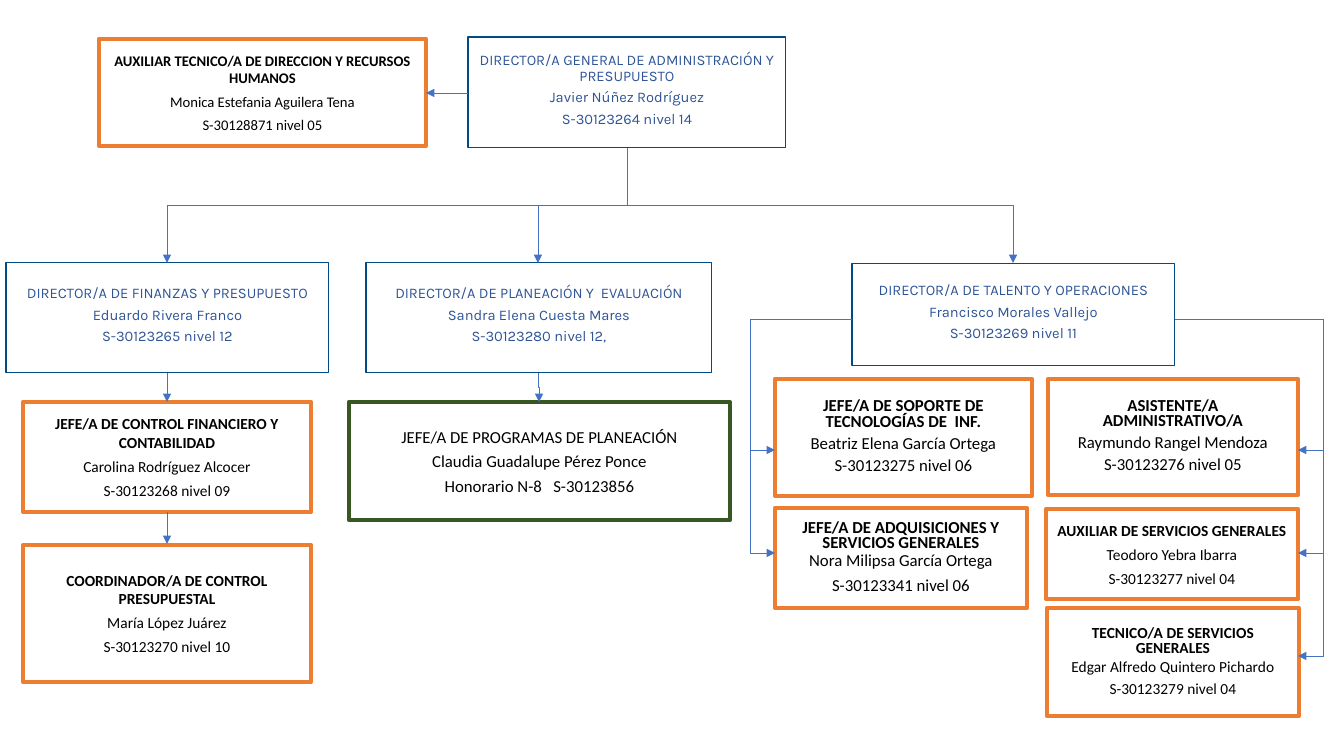
from pptx import Presentation
from pptx import util as u
from pptx.dml.color import RGBColor
from pptx.enum import shapes, text
from pptx.oxml.ns import qn
from lxml import etree

WHITE = RGBColor(0xFF, 0xFF, 0xFF)
BLACK = RGBColor(0, 0, 0)
NAVY = RGBColor(0x00, 0x4A, 0x86)
INK = RGBColor(0x2F, 0x55, 0x97)
ORANGE = RGBColor(0xED, 0x7D, 0x31)
GREEN = RGBColor(0x38, 0x57, 0x23)
BLUE = RGBColor(0x44, 0x72, 0xC4)

WIDE = ((1.0, 4), (1.0, 4), (1.0, 4))
LOOSE = ((1.0, 4.2), (u.Pt(16.6), 0.8), (u.Pt(16.6), 0.8))
TIGHT = ((u.Pt(10.8), 2.3), (u.Pt(15), 0.8), (u.Pt(15), 0.8))
MIXED = ((u.Pt(10.8), 2.3), (u.Pt(10.8), 2.3), (u.Pt(15), 0.8))
CLOSE = ((u.Pt(10.8), 2.3), (u.Pt(10.8), 2.3), (1.0, 3))


def px(n):
    return u.Emu(round(n * 914400 / 100.8))


class Chart:
    def __init__(self):
        self.deck = Presentation()
        self.deck.slide_width = px(1344)
        self.deck.slide_height = px(756)
        self.slide = self.deck.slides.add_slide(self.deck.slide_layouts[6])

    def box(self, at, line, width, pad, foot):
        box = self.slide.shapes.add_shape(
            shapes.MSO_SHAPE.RECTANGLE, *[px(n) for n in at])
        box.shadow.inherit = False
        box.fill.background()
        box.line.color.rgb = line
        box.line.width = u.Pt(width)
        frame = box.text_frame
        frame.word_wrap = True
        frame.vertical_anchor = text.MSO_ANCHOR.MIDDLE
        frame.margin_left = frame.margin_right = px(pad)
        frame.margin_top = px(min(pad, 5))
        frame.margin_bottom = px(foot)
        return box

    def label(self, box, lines, font, size, color):
        frame = box.text_frame
        frame.text = "\n".join(lines)
        for para in frame.paragraphs:
            para.alignment = text.PP_ALIGN.CENTER
            para.font.name = font
            para.font.size = u.Pt(size)
            para.font.color.rgb = color
        return frame.paragraphs

    def head(self, at, *lines):
        box = self.box(at, NAVY, 0.75, 1, 6)
        box.fill.solid()
        box.fill.fore_color.rgb = WHITE
        for para in self.label(box, lines, "Karla", 10.5, INK):
            para.line_spacing = 0.9
            para.space_after = u.Pt(4)

    def post(self, at, lines, size=11, lead=WIDE, pad=10, line=ORANGE, bold=True):
        box = self.box(at, line, 3, pad, 5)
        paras = self.label(box, lines, "Calibri", size, BLACK)
        paras[0].font.bold = bold
        for para, (space, gap) in zip(paras, lead):
            para.line_spacing = space
            para.space_before = u.Pt(gap)

    def link(self, kind, *ends):
        link = self.slide.shapes.add_connector(kind, *[px(n) for n in ends])
        link.line.color.rgb = BLUE
        link.line.width = u.Pt(0.5)
        props = link.element.spPr
        etree.SubElement(props.find(qn("a:ln")), qn("a:tailEnd"), type="triangle")
        etree.SubElement(props, qn("a:effectLst"))
        return props

    def arrow(self, *ends):
        self.link(shapes.MSO_CONNECTOR.STRAIGHT, *ends)

    def side(self, x, y, to, down, via):
        props = self.link(shapes.MSO_CONNECTOR.ELBOW, x, y, to, down)
        bend = round((via - x) / (to - x) * 100000)
        guides = props.find(qn("a:prstGeom")).find(qn("a:avLst"))
        etree.SubElement(guides, qn("a:gd"), name="adj1", fmla=f"val {bend}")

    def drop(self, x, y, to, down):
        mid, half = (x + to) / 2, (down - y) / 2
        level, reach = (y + down) / 2, abs(to - x) / 2
        turn = -1 if to > x else 1
        props = self.link(shapes.MSO_CONNECTOR.ELBOW,
                          mid - turn * half, level - reach,
                          mid + turn * half, level + reach)
        angle = 270 if to > x else 90
        props.find(qn("a:xfrm")).set("rot", str(angle * 60000))


def main():
    chart = Chart()
    chart.head((468, 37, 318, 111), "DIRECTOR/A GENERAL DE ADMINISTRACIÓN Y PRESUPUESTO",
               "Javier Núñez Rodríguez", "S-30123264 nivel 14")
    chart.head((6, 263, 323, 110), "DIRECTOR/A DE FINANZAS Y PRESUPUESTO",
               "Eduardo Rivera Franco", "S-30123265 nivel 12")
    chart.head((366, 263, 346, 110), "DIRECTOR/A DE PLANEACIÓN Y  EVALUACIÓN",
               "Sandra Elena Cuesta Mares", "S-30123280 nivel 12,")
    chart.head((852, 264, 323, 102), "DIRECTOR/A DE TALENTO Y OPERACIONES",
               "Francisco Morales Vallejo", "S-30123269 nivel 11")

    chart.post((99, 39, 327, 107), ("AUXILIAR TECNICO/A DE DIRECCION Y RECURSOS HUMANOS",
               "Monica Estefania Aguilera Tena", "S-30128871 nivel 05"), 10.5)
    chart.post((23, 402, 288, 110), ("JEFE/A DE CONTROL FINANCIERO Y CONTABILIDAD",
               "Carolina Rodríguez Alcocer", "S-30123268 nivel 09"), lead=LOOSE)
    chart.post((23, 545, 288, 137), ("COORDINADOR/A DE CONTROL PRESUPUESTAL",
               "María López Juárez", "S-30123270 nivel 10"))
    chart.post((349, 402, 381, 118), ("JEFE/A DE PROGRAMAS DE PLANEACIÓN",
               "Claudia Guadalupe Pérez Ponce", "Honorario N-8   S-30123856"),
               12, LOOSE, line=GREEN, bold=False)
    chart.post((775, 379, 257, 117), ("JEFE/A DE SOPORTE DE TECNOLOGÍAS DE  INF.",
               "Beatriz Elena García Ortega", "S-30123275 nivel 06"), 12, TIGHT)
    chart.post((775, 508, 252, 100), ("JEFE/A DE ADQUISICIONES Y SERVICIOS GENERALES",
               "Nora Milipsa García Ortega", "S-30123341 nivel 06"), 12, CLOSE)
    chart.post((1048, 379, 250, 116), ("ASISTENTE/A ADMINISTRATIVO/A",
               "Raymundo Rangel Mendoza", "S-30123276 nivel 05"), 12, TIGHT, 20)
    chart.post((1046, 509, 252, 90), ("AUXILIAR DE SERVICIOS GENERALES",
               "Teodoro Yebra Ibarra", "S-30123277 nivel 04"))
    chart.post((1047, 608, 252, 108), ("TECNICO/A DE SERVICIOS GENERALES",
               "Edgar Alfredo Quintero Pichardo", "S-30123279 nivel 04"), lead=MIXED)

    chart.arrow(468, 93, 426, 93)
    chart.arrow(167, 373, 167, 402)
    chart.arrow(167, 512, 167, 544)
    chart.drop(538, 373, 539, 402)
    for to in (167, 538, 1013):
        chart.drop(627, 148, to, 263)
    for down in (450, 553):
        chart.side(852, 319, 775, down, 750)
    for down in (450, 553, 656):
        chart.side(1175, 319, 1298, down, 1323)
    chart.deck.save("out.pptx")


if __name__ == "__main__":
    main()
